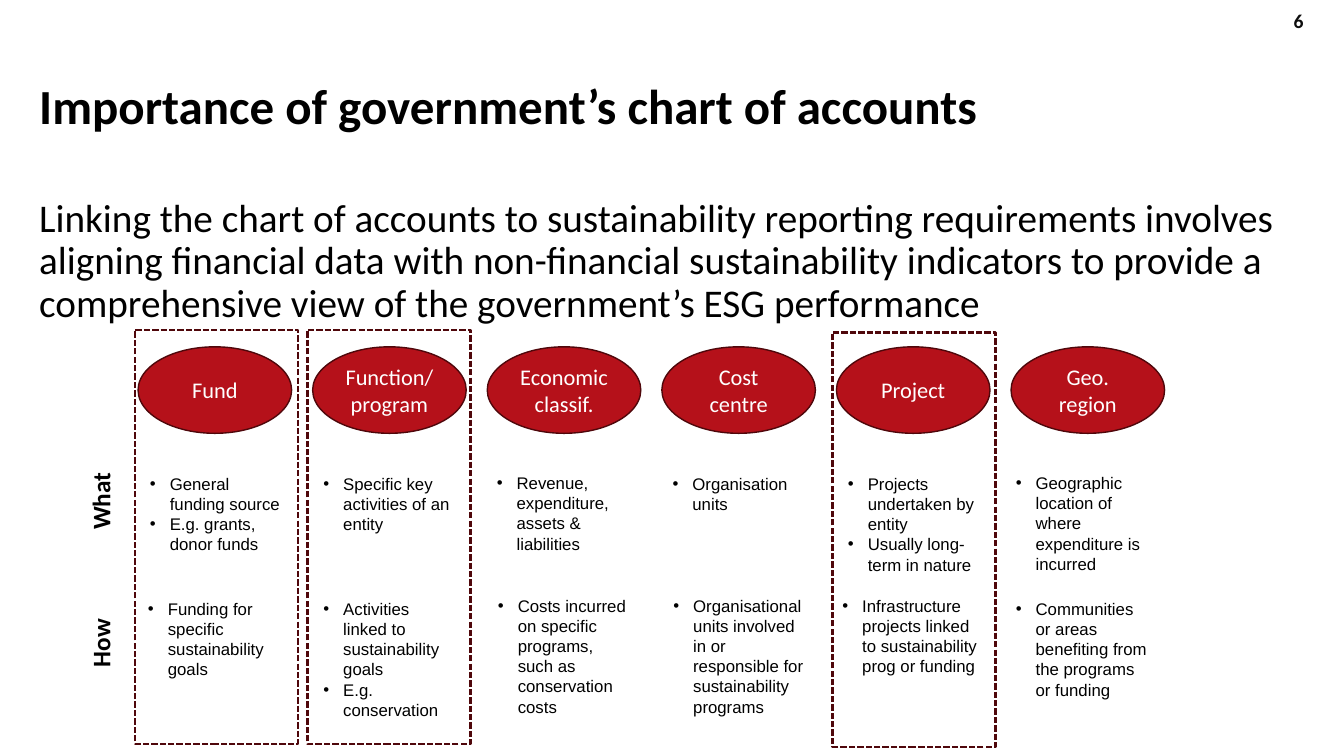
"""Builds a slide on linking the chart of accounts to sustainability reporting."""
from dataclasses import dataclass
from typing import Any

from lxml.etree import SubElement
from pptx import Presentation
from pptx.dml.color import RGBColor
from pptx.enum.dml import MSO_LINE_DASH_STYLE as Dash
from pptx.enum.shapes import MSO_SHAPE as Kind
from pptx.enum.text import MSO_ANCHOR as Anchor, MSO_AUTO_SIZE as Auto, PP_ALIGN as Align
from pptx.oxml.ns import qn
from pptx.util import Cm, Pt

HUES = {"ink": "000000", "page": "0D0D0D", "red": "B5111A", "edge": "4F070B", "white": "FFFFFF"}
LEFT, PITCH, WIDE = 3.48, 4.4, 3.87


@dataclass
class Style:
    size: float
    name: str = "Calibri"
    hue: str = "ink"
    bold: bool = False


@dataclass
class Label:
    text: str
    box: tuple[float, float, float, float]
    style: Style
    para: dict[str, Any]
    frame: dict[str, Any]
    turn: float = 0


@dataclass
class Note:
    left: float
    top: float
    high: float
    lines: list[str]
    wide: float = 3.86


@dataclass
class Column:
    head: str
    what: Note
    how: Note


SMALL, OVAL, SIDE = Style(12, "Arial"), Style(16, hue="white"), Style(18, bold=True)
GROW = {"auto_size": Auto.SHAPE_TO_FIT_TEXT}
MIDDLE = {"vertical_anchor": Anchor.MIDDLE}

LABELS = [
    Label("6", (31.6, 0, 1.5, 1.02), Style(14, hue="page", bold=True), {"alignment": Align.RIGHT}, MIDDLE),
    Label("Importance of government’s chart of accounts", (0.74, 1.6, 32.33, 2.49),
          Style(35, bold=True), {"line_spacing": Pt(30.8)}, MIDDLE),
    Label("Linking the chart of accounts to sustainability reporting requirements involves "
          "aligning financial data with non-financial sustainability indicators to provide a "
          "comprehensive view of the government’s ESG performance",
          (0.74, 4.88, 32.33, 13.44), Style(28), {"line_spacing": 0.9}, {}),
    Label("What", (1.45, 12.01, 2.16, 1.02), SIDE, {}, GROW, 270),
    Label("How", (1.45, 15.47, 2.16, 1.02), SIDE, {}, GROW, 270),
]

COLUMNS = [
    Column("Fund",
           Note(3.53, 11.81, 2.31, ["General funding source", "E.g. grants, donor funds"]),
           Note(3.48, 14.96, 2.31, ["Funding for specific sustainability goals"])),
    Column("Function/ program",
           Note(7.9, 11.81, 1.8, ["Specific key activities of an entity"]),
           Note(7.9, 14.96, 3.33, ["Activities linked to sustainability goals", "E.g. conservation"])),
    Column("Economic classif.",
           Note(12.27, 11.79, 2.31, ["Revenue, expenditure, assets & liabilities"]),
           Note(12.3, 14.88, 3.33, ["Costs incurred on specific programs, such as conservation costs"])),
    Column("Cost centre",
           Note(16.7, 11.81, 1.27, ["Organisation units"]),
           Note(16.72, 14.88, 3.33,
                ["Organisational units involved in or responsible for sustainability programs"])),
    Column("Project",
           Note(21.12, 11.81, 2.82, ["Projects undertaken by entity", "Usually long-term in nature"]),
           Note(20.98, 14.88, 2.31,
                ["Infrastructure projects linked to sustainability prog or funding"], 4.01)),
    Column("Geo. region",
           Note(25.35, 11.79, 2.82, ["Geographic location of where expenditure is incurred"]),
           Note(25.35, 14.96, 2.82, ["Communities or areas benefiting from the programs or funding"])),
]

FRAMES = [(3.4, 8.31), (7.75, 8.31), (20.98, 8.38)]


def tint(hue: str) -> RGBColor:
    """Turn a colour name into a colour."""
    return RGBColor.from_string(HUES[hue])


def apply(item: Any, form: dict[str, Any]) -> None:
    """Set each attribute named in the format."""
    for key, value in form.items():
        setattr(item, key, value)


def write(para: Any, text: str, style: Style, form: dict[str, Any]) -> None:
    """Fill one paragraph with styled text."""
    run = para.add_run()
    run.text = text
    apply(para, form)
    apply(run.font, {"size": Pt(style.size), "name": style.name, "bold": style.bold})
    run.font.color.rgb = tint(style.hue)


def add_label(slide: Any, label: Label) -> None:
    """Place a text box with one paragraph."""
    box = slide.shapes.add_textbox(*map(Cm, label.box))
    box.rotation = label.turn
    apply(box.text_frame, {"word_wrap": True, **label.frame})
    write(box.text_frame.paragraphs[0], label.text, label.style, label.para)


def add_note(slide: Any, note: Note) -> None:
    """Place a bulleted list."""
    box = slide.shapes.add_textbox(Cm(note.left), Cm(note.top), Cm(note.wide), Cm(note.high))
    frame = box.text_frame
    apply(frame, {"word_wrap": True, **GROW})
    for rank, line in enumerate(note.lines):
        para = frame.add_paragraph() if rank else frame.paragraphs[0]
        props = para._p.get_or_add_pPr()
        apply_indent = {"marL": Cm(0.5), "indent": -Cm(0.5)}
        for key, value in apply_indent.items():
            props.set(key, str(value))
        SubElement(props, qn("a:buFont")).set("typeface", "Arial")
        SubElement(props, qn("a:buChar")).set("char", "•")
        write(para, line, SMALL, {})


def add_form(slide: Any, kind: Kind, box: tuple[float, ...], line: dict[str, Any]) -> Any:
    """Place an outlined shape without fill or shadow."""
    form = slide.shapes.add_shape(kind, *map(Cm, box))
    form.shadow.inherit = False
    form.fill.background()
    form.line.color.rgb = tint("edge")
    apply(form.line, line)
    return form


def add_oval(slide: Any, text: str, left: float) -> None:
    """Place the heading of a column."""
    oval = add_form(slide, Kind.OVAL, (left, 8.74, WIDE, 2.18), {"width": Pt(1)})
    oval.fill.solid()
    oval.fill.fore_color.rgb = tint("red")
    apply(oval.text_frame, {"word_wrap": True, **MIDDLE})
    write(oval.text_frame.paragraphs[0], text, OVAL, {"alignment": Align.CENTER})


def main() -> None:
    """Build and save the slide."""
    deck = Presentation()
    apply(deck, {"slide_width": Cm(33.87), "slide_height": Cm(19.05)})
    slide = deck.slides.add_slide(deck.slide_layouts[6])
    for label in LABELS:
        add_label(slide, label)
    for rank, column in enumerate(COLUMNS):
        add_oval(slide, column.head, LEFT + rank * PITCH)
        add_note(slide, column.what)
        add_note(slide, column.how)
    for left, top in FRAMES:
        add_form(slide, Kind.RECTANGLE, (left, top, 4.11, 10.44),
                 {"width": Pt(1.5), "dash_style": Dash.SQUARE_DOT})
    deck.save("out.pptx")


if __name__ == "__main__":
    main()
